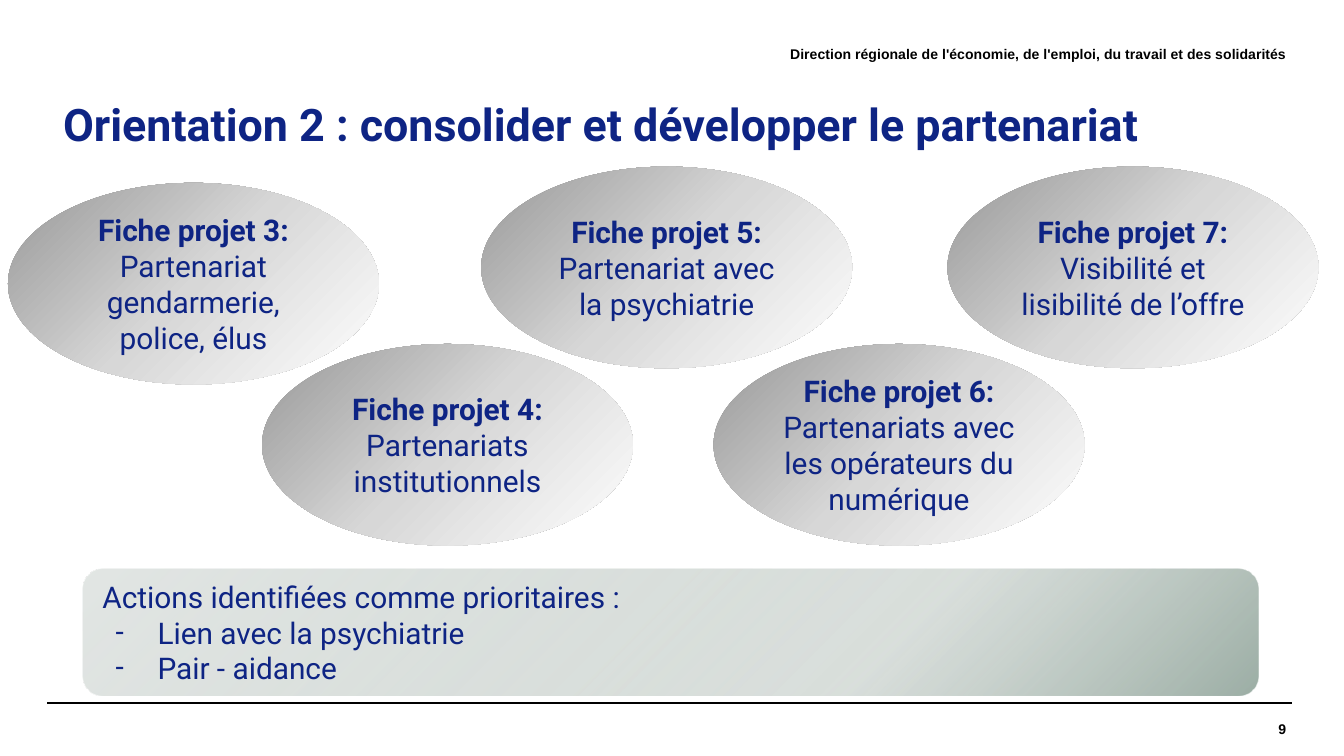
from lxml.etree import SubElement
from pptx import Presentation
from pptx.dml.color import RGBColor
from pptx.enum.shapes import MSO_CONNECTOR, MSO_SHAPE
from pptx.enum.text import MSO_ANCHOR, MSO_AUTO_SIZE, PP_ALIGN
from pptx.oxml.ns import qn
from pptx.util import Pt

TITLE = "Orientation 2\u00a0: consolider et développer le partenariat"
HEADER = "Direction régionale de l'économie, de l'emploi, du travail et des solidarités"
PAGE_NUMBER = "9"
# number, description, left, top
PROJECTS = [
    (3, "Partenariat gendarmerie, police, élus", 4.3, 98),
    (4, "Partenariats institutionnels", 140.4, 184.3),
    (5, "Partenariat avec la psychiatrie", 257.8, 89.3),
    (6, "Partenariats avec les opérateurs du numérique", 382.3, 184.3),
    (7, "Visibilité et lisibilité de l’offre", 507.6, 89.3),
]
PRIORITIES_HEADING = "Actions identifiées comme prioritaires\u00a0:"
PRIORITIES = ["Lien avec la psychiatrie", "Pair - aidance"]

ELLIPSE_SIZE = (198.7, 108)
PRIORITIES_BOX = (44.5, 304.7, 629.5, 67.9)
TITLE_BOX = (25.2, 46.8, 663.1, 42.5)
SMALL_TEXTS = [
    (HEADER, (226, 15.1, 463, 28)),
    (PAGE_NUMBER, (582.5, 376.6, 106.5, 28)),
]
RULE_Y = 376.7
RULE_SPANS = [(25.2, 689), (28.1, 691.9)]

THEME = {
    "heading_font": "Roboto",
    "small_font": "Arial",
    "navy": "0E2484",
    "black": "000000",
    "title_size": 24,
    "body_size": 16,
    "small_size": 7.5,
    # position %, colour, opacity %
    "silver": [(0, "979797", 100), (50, "D7D7D7", 100), (100, "FFFFFF", 100)],
    "sage": [(0, "9CAEA5", 100), (32, "C4CDC8", 64), (100, "E2E6E4", 100)],
}


def points(values):
    return [Pt(value) for value in values]


def add_run(paragraph, text, size, bold=False, font="heading_font", color="navy"):
    run = paragraph.add_run()
    run.text = text
    run.font.name = THEME[font]
    run.font.size = Pt(THEME[size])
    run.font.bold = bold
    run.font.color.rgb = RGBColor.from_string(THEME[color])


def set_gradient(shape, stops, clockwise_angle):
    shape.fill.gradient()
    shape.fill.gradient_angle = 360 - clockwise_angle
    stop_list = shape._element.spPr.find(qn("a:gradFill")).find(qn("a:gsLst"))
    for old_stop in list(stop_list):
        stop_list.remove(old_stop)
    for position, color, opacity in stops:
        stop = SubElement(stop_list, qn("a:gs"), pos=str(position * 1000))
        color_element = SubElement(stop, qn("a:srgbClr"), val=color)
        if opacity < 100:
            SubElement(color_element, qn("a:alpha"), val=str(opacity * 1000))


def add_gradient_shape(slide, kind, box, stops, clockwise_angle):
    shape = slide.shapes.add_shape(kind, *points(box))
    shape.shadow.inherit = False
    shape.line.fill.background()
    set_gradient(shape, stops, clockwise_angle)
    shape.text_frame.word_wrap = True
    shape.text_frame.vertical_anchor = MSO_ANCHOR.MIDDLE
    return shape


def set_indent(paragraph, left, first_line):
    properties = paragraph._p.get_or_add_pPr()
    properties.set("marL", str(Pt(left)))
    properties.set("indent", str(Pt(first_line)))
    return properties


def add_rule(slide, start, end):
    rule = slide.shapes.add_connector(
        MSO_CONNECTOR.STRAIGHT, *points((start, RULE_Y, end, RULE_Y)))
    rule.line.width = Pt(0.8)
    rule.line.color.rgb = RGBColor.from_string(THEME["black"])
    SubElement(rule._element.spPr, qn("a:effectLst"))


def add_small_text(slide, text, box):
    frame = slide.shapes.add_textbox(*points(box)).text_frame
    frame.word_wrap = True
    frame.vertical_anchor = MSO_ANCHOR.MIDDLE
    frame.margin_left = frame.margin_right = frame.margin_top = frame.margin_bottom = 0
    paragraph = frame.paragraphs[0]
    paragraph.alignment = PP_ALIGN.RIGHT
    add_run(paragraph, text, "small_size", True, "small_font", "black")


def format_title(title):
    title.left, title.top, title.width, title.height = points(TITLE_BOX)
    frame = title.text_frame
    frame.auto_size = MSO_AUTO_SIZE.NONE
    frame.vertical_anchor = MSO_ANCHOR.MIDDLE
    paragraph = frame.paragraphs[0]
    paragraph.alignment = PP_ALIGN.LEFT
    paragraph.line_spacing = 0.9
    set_indent(paragraph, 1.4, 0)
    add_run(paragraph, TITLE, "title_size", True)


def add_project(slide, number, description, left, top):
    ellipse = add_gradient_shape(
        slide, MSO_SHAPE.OVAL, (left, top, *ELLIPSE_SIZE), THEME["silver"], 45)
    paragraph = ellipse.text_frame.paragraphs[0]
    paragraph.alignment = PP_ALIGN.CENTER
    add_run(paragraph, f"Fiche projet {number}: ", "body_size", True)
    add_run(paragraph, description, "body_size")


def add_priorities(slide):
    panel = add_gradient_shape(
        slide, MSO_SHAPE.ROUNDED_RECTANGLE, PRIORITIES_BOX, THEME["sage"], 225)
    frame = panel.text_frame
    heading = frame.paragraphs[0]
    heading.alignment = PP_ALIGN.LEFT
    add_run(heading, PRIORITIES_HEADING, "body_size")
    for priority in PRIORITIES:
        paragraph = frame.add_paragraph()
        paragraph.alignment = PP_ALIGN.LEFT
        properties = set_indent(paragraph, 29.5, -22.5)
        SubElement(properties, qn("a:buFont"), typeface=THEME["heading_font"])
        SubElement(properties, qn("a:buChar"), char="-")
        add_run(paragraph, priority, "body_size")


def main():
    presentation = Presentation()
    presentation.slide_width, presentation.slide_height = Pt(720), Pt(405)
    slide = presentation.slides.add_slide(presentation.slide_layouts[5])
    for start, end in RULE_SPANS:
        add_rule(slide, start, end)
    format_title(slide.shapes.title)
    for text, box in SMALL_TEXTS:
        add_small_text(slide, text, box)
    for project in PROJECTS:
        add_project(slide, *project)
    add_priorities(slide)
    presentation.save("out.pptx")


if __name__ == "__main__":
    main()
